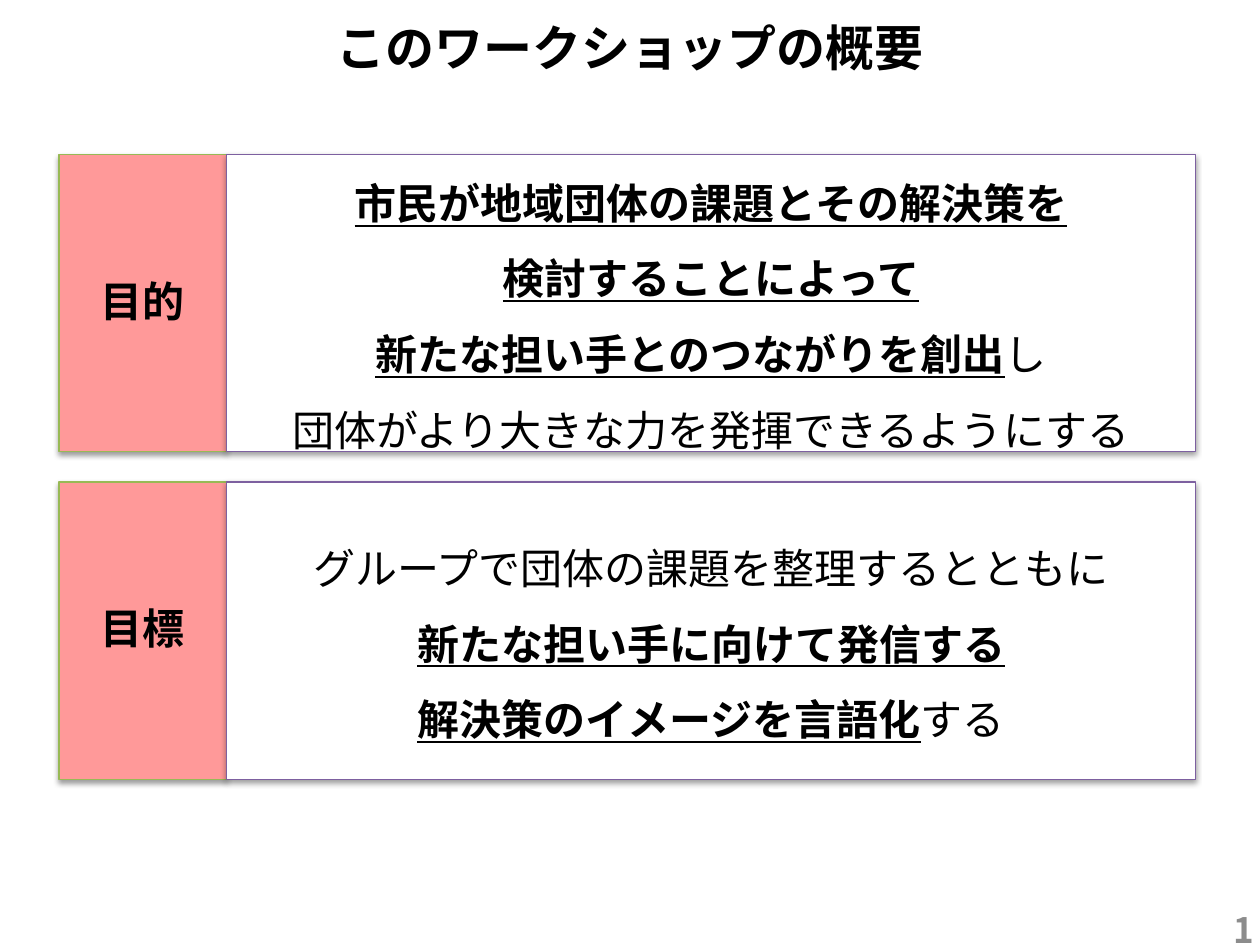
from lxml import etree
from pptx import Presentation
from pptx.dml.color import RGBColor
from pptx.enum.shapes import MSO_SHAPE
from pptx.enum.text import MSO_ANCHOR, MSO_AUTO_SIZE, PP_ALIGN
from pptx.oxml import parse_xml
from pptx.oxml.ns import qn
from pptx.util import Cm, Pt

FONT = "Noto Sans CJK JP"
BLACK = RGBColor(0x00, 0x00, 0x00)
WHITE = RGBColor(0xFF, 0xFF, 0xFF)
GREY = RGBColor(0x8C, 0x8C, 0x8C)
PINK = RGBColor(0xFF, 0x99, 0x99)
GREEN = RGBColor(0x98, 0xB9, 0x55)
PURPLE = RGBColor(0x7D, 0x60, 0xA0)

SHADOW = (
    '<a:effectLst xmlns:a="http://schemas.openxmlformats.org/drawingml/2006/main">'
    '<a:outerShdw blurRad="40000" dist="20000" dir="5400000" rotWithShape="0">'
    '<a:srgbClr val="000000"><a:alpha val="38000"/></a:srgbClr>'
    "</a:outerShdw></a:effectLst>"
)

LEFT, TOP = Cm(1.19), Cm(3.12)
LABEL_WIDTH, BODY_WIDTH = Cm(3.38), Cm(19.53)
ROW_HEIGHT, ROW_STEP = Cm(5.99), Cm(6.6)

ROWS = [
    ("目的", [
        [("市民が地域団体の課題とその解決策を", True)],
        [("検討することによって", True)],
        [("新たな担い手とのつながりを創出", True), ("し", False)],
        [("団体がより大きな力を発揮できるようにする", False)],
    ]),
    ("目標", [
        [("グループで団体の課題を整理するとともに", False)],
        [("新たな担い手に向けて発信する", True)],
        [("解決策のイメージを言語化", True), ("する", False)],
    ]),
]


def prepare_frame(shape):
    frame = shape.text_frame
    frame.word_wrap = True
    frame.auto_size = MSO_AUTO_SIZE.NONE
    frame.vertical_anchor = MSO_ANCHOR.MIDDLE
    frame.margin_left = frame.margin_right = 0
    frame.margin_top = frame.margin_bottom = 0
    return frame


def add_run(paragraph, text, size, color=BLACK, bold=True, underline=False):
    run = paragraph.add_run()
    run.text = text
    font = run.font
    font.size = Pt(size)
    font.bold = bold
    font.underline = underline
    font.color.rgb = color
    font.name = FONT
    etree.SubElement(run._r.get_or_add_rPr(), qn("a:ea"), typeface=FONT)


def add_box(slide, left, top, width, fill, line):
    shape = slide.shapes.add_shape(MSO_SHAPE.RECTANGLE, left, top, width, ROW_HEIGHT)
    shape.fill.solid()
    shape.fill.fore_color.rgb = fill
    shape.line.color.rgb = line
    shape.line.width = Pt(0.75)
    shape._element.spPr.append(parse_xml(SHADOW))
    return prepare_frame(shape)


def add_label(slide, top, text):
    paragraph = add_box(slide, LEFT, top, LABEL_WIDTH, PINK, GREEN).paragraphs[0]
    paragraph.alignment = PP_ALIGN.CENTER
    paragraph.line_spacing = 0.93
    add_run(paragraph, text, 24)


def add_body(slide, top, lines):
    frame = add_box(slide, LEFT + LABEL_WIDTH, top, BODY_WIDTH, WHITE, PURPLE)
    for index, runs in enumerate(lines):
        paragraph = frame.add_paragraph() if index else frame.paragraphs[0]
        paragraph.alignment = PP_ALIGN.CENTER
        paragraph.line_spacing = Pt(43.2)
        for text, emphasis in runs:
            add_run(paragraph, text, 24, bold=emphasis, underline=emphasis)


def set_title(slide, text):
    title = slide.shapes.title
    title.left, title.top = Cm(1.27), Cm(0.36)
    title.width, title.height = Cm(22.86), Cm(1.17)
    paragraph = prepare_frame(title).paragraphs[0]
    paragraph.alignment = PP_ALIGN.CENTER
    add_run(paragraph, text, 28)


def add_page_number(slide, text):
    shape = slide.shapes.add_textbox(Cm(19.46), Cm(18.44), Cm(5.82), Cm(0.61))
    paragraph = prepare_frame(shape).paragraphs[0]
    paragraph.alignment = PP_ALIGN.RIGHT
    add_run(paragraph, text, 20, GREY)


def main():
    presentation = Presentation()
    presentation.slide_width, presentation.slide_height = Cm(25.4), Cm(19.05)
    slide = presentation.slides.add_slide(presentation.slide_layouts[5])
    set_title(slide, "このワークショップの概要")
    add_page_number(slide, "1")
    for index, (label, lines) in enumerate(ROWS):
        top = TOP + index * ROW_STEP
        add_label(slide, top, label)
        add_body(slide, top, lines)
    presentation.save("out.pptx")


if __name__ == "__main__":
    main()
